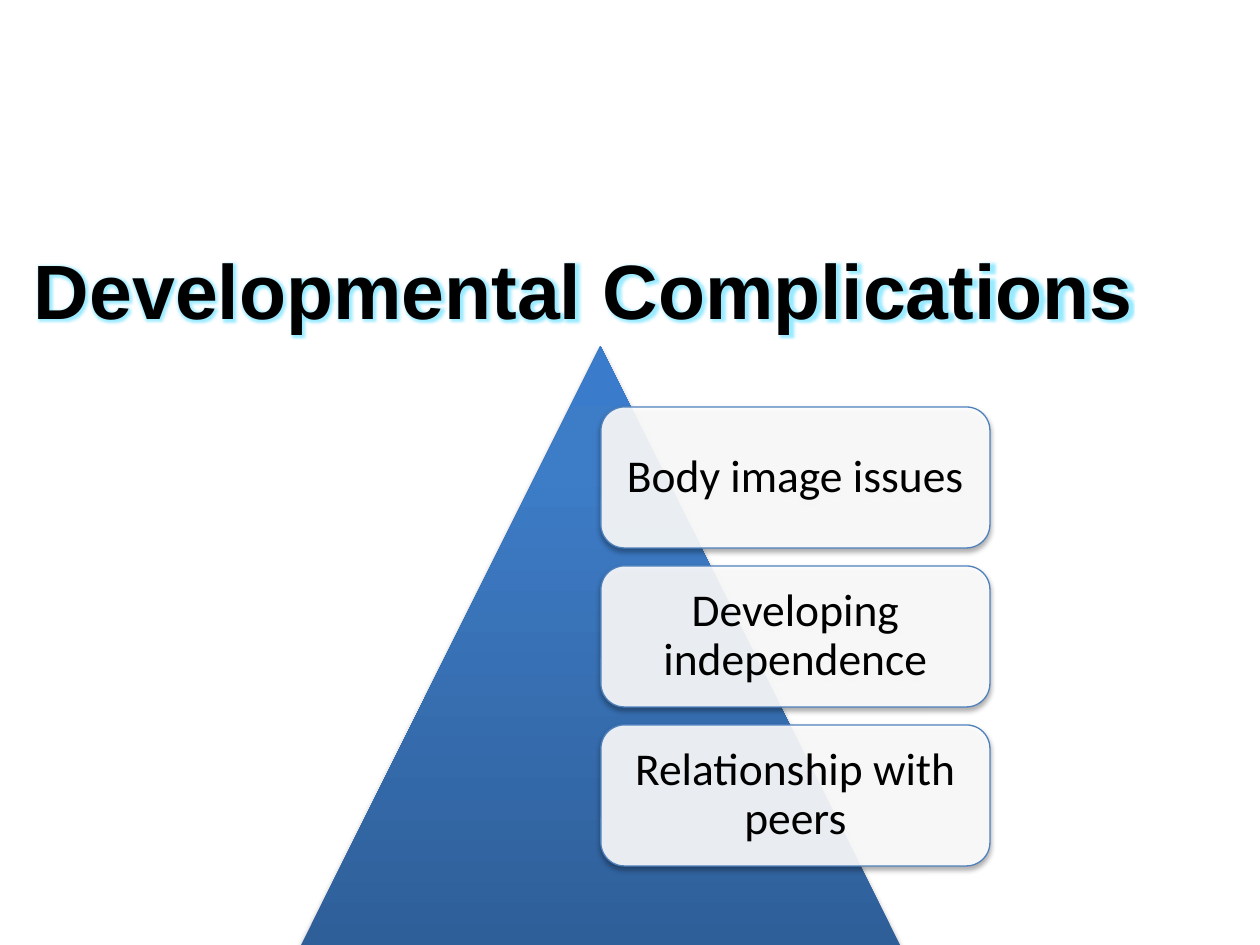
import dataclasses

import lxml.etree
import pptx
import pptx.dml.color
import pptx.enum.shapes
import pptx.enum.text
import pptx.oxml.ns
import pptx.util

EMU_PER_PX = 914400 / 126
SHAPE = pptx.enum.shapes.MSO_SHAPE
ALIGN = pptx.enum.text.PP_ALIGN
PYRAMID_STOPS = {0: "2F5F99", 80: "3D7CC7", 100: "3A7CCB"}
CARD_TEXTS = ["Body image issues", "Developing independence", "Relationship with peers"]
CARD_TOP, CARD_HEIGHT, CARD_GAP = 407, 141, 18


@dataclasses.dataclass
class Box:
    left: int
    top: int
    width: int
    height: int

    def emu(self) -> list[int]:
        return [px(value) for value in dataclasses.astuple(self)]


@dataclasses.dataclass
class TextStyle:
    font: str
    size: int
    bold: bool
    align: ALIGN
    line_spacing: float
    margins: tuple[int, int]


TITLE_STYLE = TextStyle("Arial", 44, True, ALIGN.LEFT, 1.0, (13, 6))
CARD_STYLE = TextStyle("Calibri", 26, False, ALIGN.CENTER, 0.9, (14, 14))


def px(value: int) -> int:
    return round(value * EMU_PER_PX)


def rgb(color: str) -> pptx.dml.color.RGBColor:
    return pptx.dml.color.RGBColor.from_string(color)


def set_values(target, values: dict) -> None:
    for name, value in values.items():
        setattr(target, name, value)


def add_element(parent, name: str, **attributes):
    values = {key: str(value) for key, value in attributes.items()}
    return lxml.etree.SubElement(parent, pptx.oxml.ns.qn(f"a:{name}"), values)


def add_color(parent, color: str, opacity: int = 100) -> None:
    element = add_element(parent, "srgbClr", val=color)
    if opacity < 100:
        add_element(element, "alpha", val=opacity * 1000)


def add_shadow(shape) -> None:
    """Give the shape a soft shadow that falls straight down."""
    shape.shadow.inherit = False
    effects = shape._element.spPr.find(pptx.oxml.ns.qn("a:effectLst"))
    shadow = add_element(effects, "outerShdw", blurRad=pptx.util.Pt(3.1),
                         dist=pptx.util.Pt(1.8), dir=5400000, rotWithShape=0)
    add_color(shadow, "000000", 35)


def write_text(shape, text: str, style: TextStyle):
    side, edge = (px(value) for value in style.margins)
    set_values(shape.text_frame, {
        "word_wrap": True,
        "vertical_anchor": pptx.enum.text.MSO_ANCHOR.MIDDLE,
        "margin_left": side, "margin_right": side,
        "margin_top": edge, "margin_bottom": edge,
    })
    para = shape.text_frame.paragraphs[0]
    set_values(para, {"alignment": style.align, "line_spacing": style.line_spacing})
    span = para.add_run()
    span.text = text
    set_values(span.font, {"size": pptx.util.Pt(style.size), "bold": style.bold})
    span.font.color.rgb = rgb("000000")
    return span


def add_title(page, text: str, box: Box) -> None:
    span = write_text(page.shapes.add_textbox(*box.emu()), text, TITLE_STYLE)
    effects = add_element(span._r.get_or_add_rPr(), "effectLst")
    add_color(add_element(effects, "glow", rad=pptx.util.Pt(5)), "00CCFF", 40)
    span.font.name = TITLE_STYLE.font


def add_pyramid(page, box: Box) -> None:
    shape = page.shapes.add_shape(SHAPE.ISOSCELES_TRIANGLE, *box.emu())
    shape.line.fill.background()
    shape.fill.gradient()
    shape.fill.gradient_angle = 90
    stops = shape._element.spPr.find(".//" + pptx.oxml.ns.qn("a:gsLst"))
    for stop in list(stops):
        stops.remove(stop)
    for position, color in PYRAMID_STOPS.items():
        add_color(add_element(stops, "gs", pos=position * 1000), color)
    add_shadow(shape)


def add_card(page, text: str, box: Box) -> None:
    shape = page.shapes.add_shape(SHAPE.ROUNDED_RECTANGLE, *box.emu())
    shape.fill.solid()
    shape.fill.fore_color.rgb = rgb("FFFFFF")
    color = shape._element.spPr.find(".//" + pptx.oxml.ns.qn("a:srgbClr"))
    add_element(color, "alpha", val=90000)
    shape.line.color.rgb = rgb("4F81BD")
    shape.line.width = pptx.util.Pt(0.75)
    add_shadow(shape)
    write_text(shape, text, CARD_STYLE).font.name = CARD_STYLE.font


def main() -> None:
    deck = pptx.Presentation()
    set_values(deck, {"slide_width": px(1260), "slide_height": px(945)})
    page = deck.slides.add_slide(deck.slide_layouts[6])
    add_title(page, "Developmental Complications", Box(21, 231, 1134, 116))
    add_pyramid(page, Box(301, 346, 599, 599))
    for index, text in enumerate(CARD_TEXTS):
        top = CARD_TOP + index * (CARD_HEIGHT + CARD_GAP)
        add_card(page, text, Box(601, top, 389, CARD_HEIGHT))
    deck.save("out.pptx")


if __name__ == "__main__":
    main()
